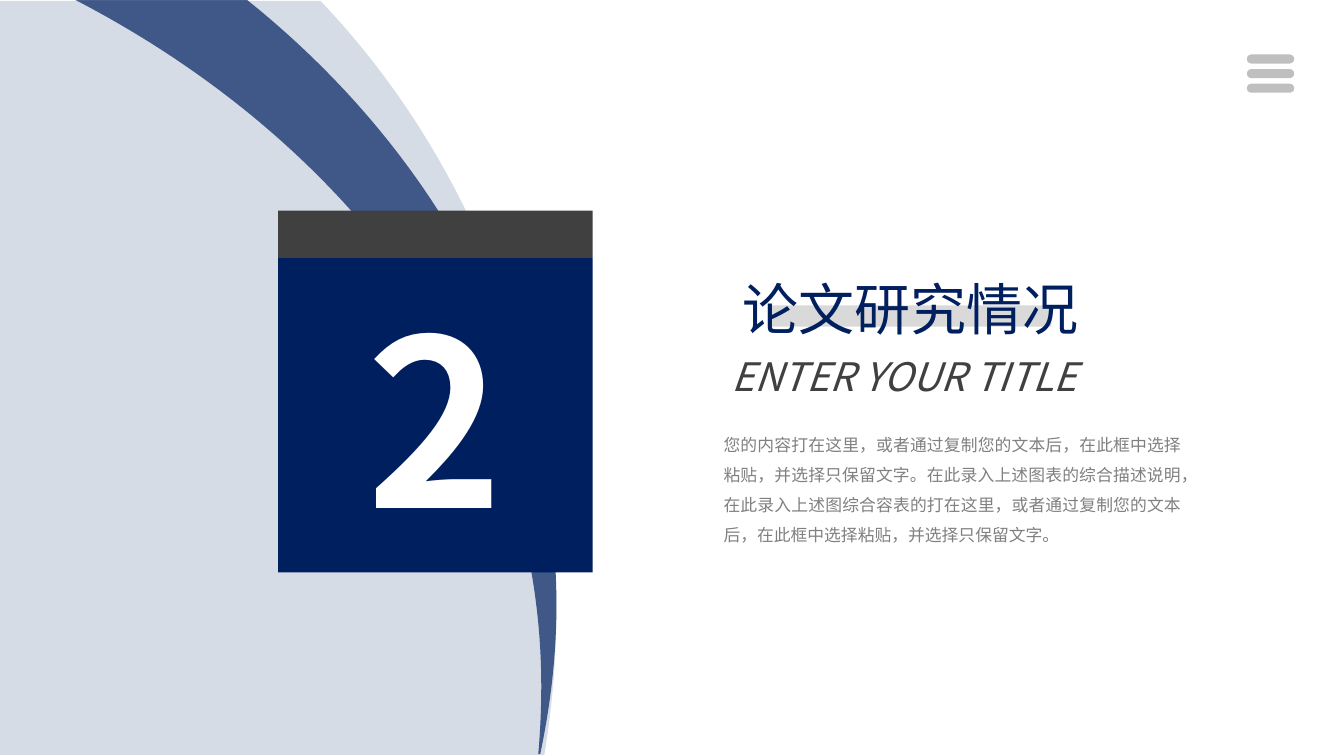
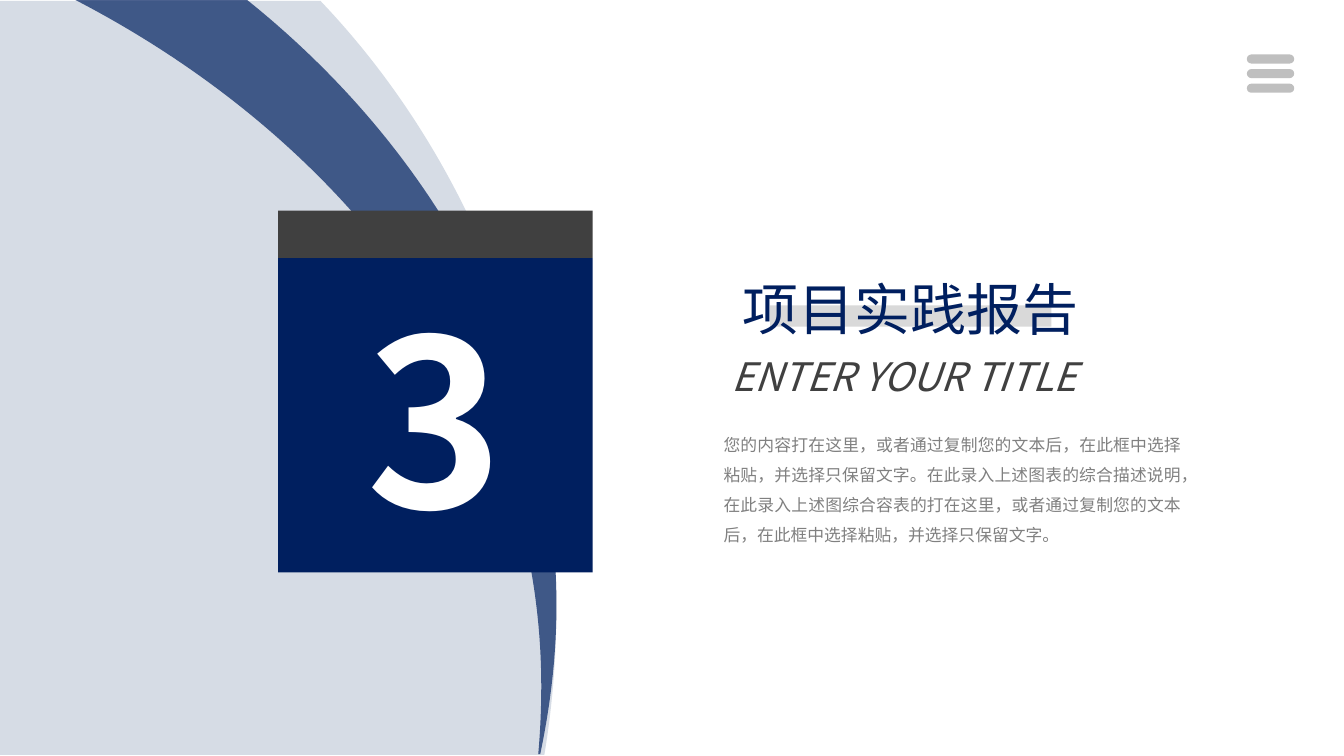
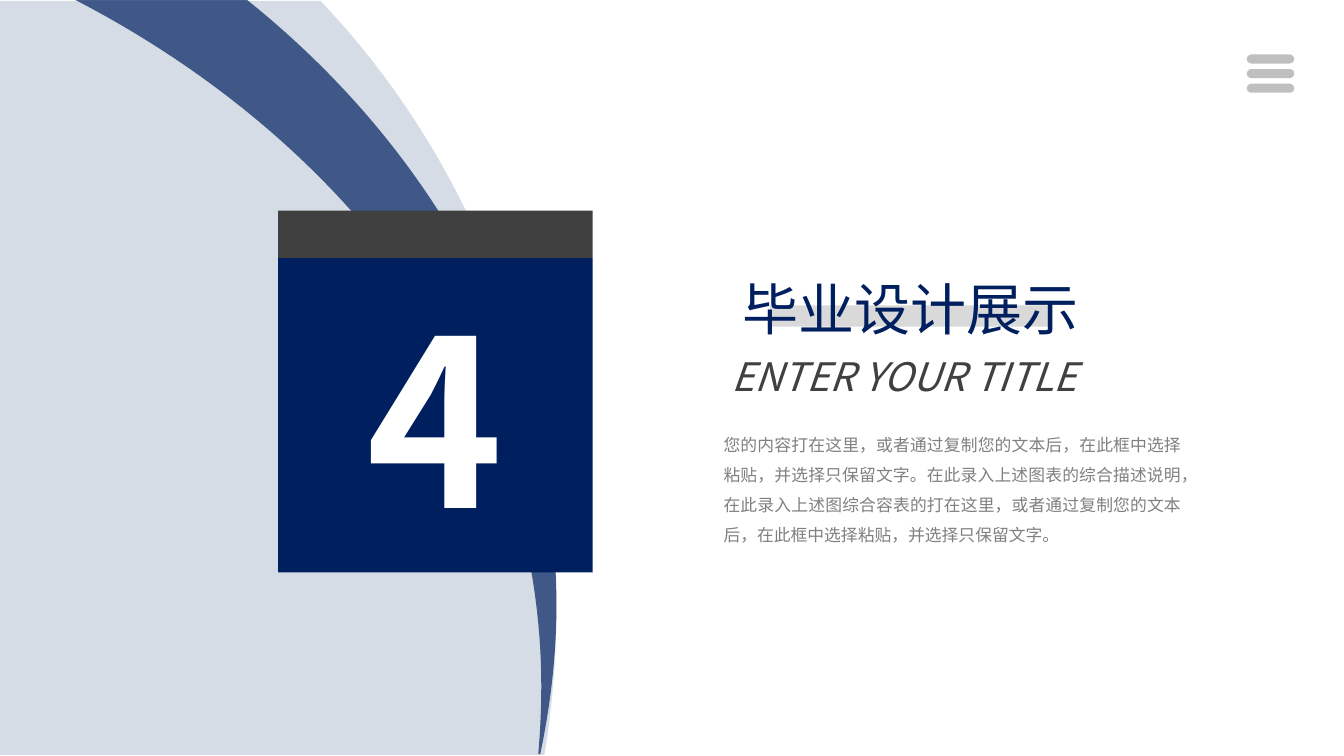
from lxml.etree import SubElement
from pptx import Presentation
from pptx.dml.color import RGBColor
from pptx.enum.shapes import MSO_SHAPE as SHAPE
from pptx.enum.text import MSO_ANCHOR as ANCHOR, MSO_AUTO_SIZE as AUTO, PP_ALIGN as ALIGN
from pptx.oxml.ns import qn
from pptx.util import Emu, Pt

PX = 9144  # 100 px to the inch
SLIDE_H = 750
SLIDE_W = SLIDE_H * 16 / 9
FONT = "Noto Sans CJK SC"
NAVY, RIBBON, PALE = "001F5F", "002060", "D6DCE5"
DARK, GREY, SILVER, LIGHT, WHITE = "404040", "808080", "BFBFBF", "D9D9D9", "FFFFFF"

SUBTITLE = "ENTER YOUR TITLE"
BODY = ("您的内容打在这里，或者通过复制您的文本后，在此框中选择粘贴，并选择只保留文字。"
        "在此录入上述图表的综合描述说明，在此录入上述图综合容表的打在这里，"
        "或者通过复制您的文本后，在此框中选择粘贴，并选择只保留文字。")
SECTIONS = [("2", "论文研究情况"), ("3", "项目实践报告"), ("4", "毕业设计展示")]

# Outlines: a start point, then lines (one point) and Bézier curves (three points)
DISC = [[(552, 601)],
        [(552, 365), (462, 151), (318, 0)],
        [(0, 0)], [(0, 748)], [(540, 748)],
        [(548, 700), (552, 651), (552, 601)]]
SWOOSH = [[(0, 0)],
          [(171, 0)],
          [(361, 152), (479, 366), (479, 602)],
          [(479, 652), (473, 701), (463, 749)],
          [(461, 749)],
          [(463, 727), (464, 704), (464, 682)],
          [(464, 395), (279, 144), (0, 0)]]


def px(*lengths):
    return [Emu(round(n * PX)) for n in lengths]


def rgb(color):
    return RGBColor.from_string(color)


def paint(sp, color, alpha=None):
    """Flat fill without line or shadow; alpha is opacity in percent."""
    sp.shadow.inherit = False
    sp.line.fill.background()
    sp.fill.solid()
    sp.fill.fore_color.rgb = rgb(color)
    if alpha is not None:
        clr = sp._element.spPr.find(qn("a:solidFill"))[0]
        SubElement(clr, qn("a:alpha"), val=str(alpha * 1000))


def add_box(shapes, kind, x, y, w, h, color):
    sp = shapes.add_shape(kind, *px(x, y, w, h))
    paint(sp, color)
    return sp


def write(tf, text, size, color, align=ALIGN.CENTER, bold=False, italic=False, spacing=None):
    tf.word_wrap = True
    p = tf.paragraphs[0]
    p.alignment = align
    if spacing:
        p.line_spacing = spacing
    r = p.add_run()
    r.text = text
    f = r.font
    f.name, f.size, f.bold, f.italic = FONT, Pt(size), bold, italic
    f.color.rgb = rgb(color)
    SubElement(r._r.get_or_add_rPr(), qn("a:ea"), typeface=FONT)


def add_text(shapes, x, y, w, h, text, size, color, **style):
    tf = shapes.add_textbox(*px(x, y, w, h)).text_frame
    write(tf, text, size, color, **style)
    tf.auto_size = AUTO.SHAPE_TO_FIT_TEXT


def add_outline(shapes, x, y, outline, color, alpha=None):
    """Draw the outline through all its points, then join each triple into a curve."""
    pts = [px(x + a, y + b) for seg in outline for a, b in seg]
    builder = shapes.build_freeform(*pts[0])
    builder.add_line_segments(pts[1:], close=True)
    sp = builder.convert_to_shape()
    lines = iter(sp._element.spPr.findall(".//" + qn("a:lnTo")))
    for seg in outline[1:]:
        first, *rest = [next(lines) for _ in seg]
        if rest:
            curve = SubElement(first.getparent(), qn("a:cubicBezTo"))
            first.addprevious(curve)
            for line in (first, *rest):
                curve.append(line[0])
                line.getparent().remove(line)
    paint(sp, color, alpha)


def add_backdrop(s, x, y):
    add_outline(s.shapes, x, y + 1, DISC, PALE)
    add_outline(s.shapes, x + 73, y - 1, SWOOSH, RIBBON, alpha=70)


def add_number_card(s, x, y, side, band, number):
    shapes = s.shapes.add_group_shape().shapes
    tf = add_box(shapes, SHAPE.RECTANGLE, x, y + band, side, side, NAVY).text_frame
    tf.vertical_anchor = ANCHOR.MIDDLE
    write(tf, number, 166, WHITE, bold=True)
    add_box(shapes, SHAPE.RECTANGLE, x, y, side, band, DARK)


def add_heading(s, x, y, w, title):
    """Title centred in w over a grey bar, with the wider subtitle below."""
    shapes = s.shapes.add_group_shape().shapes
    bar_w = 279
    add_box(shapes, SHAPE.RECTANGLE, x + (w - bar_w) / 2, y + 36, bar_w, 21, LIGHT)
    add_text(shapes, x, y, w, 77, title, 40, NAVY)
    add_text(shapes, x - 61, y + 78, 500, 57, SUBTITLE, 28, DARK, italic=True)


def add_menu_icon(s, x, y, w, h, bars=3, bar_h=9):
    shapes = s.shapes.add_group_shape().shapes
    pitch = (h - bar_h) / (bars - 1)
    for i in range(bars):
        bar = add_box(shapes, SHAPE.ROUNDED_RECTANGLE, x, y + i * pitch, w, bar_h, SILVER)
        bar.adjustments[0] = 0.5


def add_section_slide(prs, number, title):
    s = prs.slides.add_slide(prs.slide_layouts[6])
    add_backdrop(s, 0, 0)
    add_number_card(s, 276, 209, 312, 47, number)
    add_heading(s, 708, 267, 391, title)
    add_menu_icon(s, 1237, 54, 47, 38)
    add_text(s.shapes, 708, 416, 474, 128, BODY, 12, GREY, align=ALIGN.JUSTIFY, spacing=1.5)


def main():
    prs = Presentation()
    prs.slide_width, prs.slide_height = px(SLIDE_W, SLIDE_H)
    for number, title in SECTIONS:
        add_section_slide(prs, number, title)
    prs.save("out.pptx")


if __name__ == "__main__":
    main()
